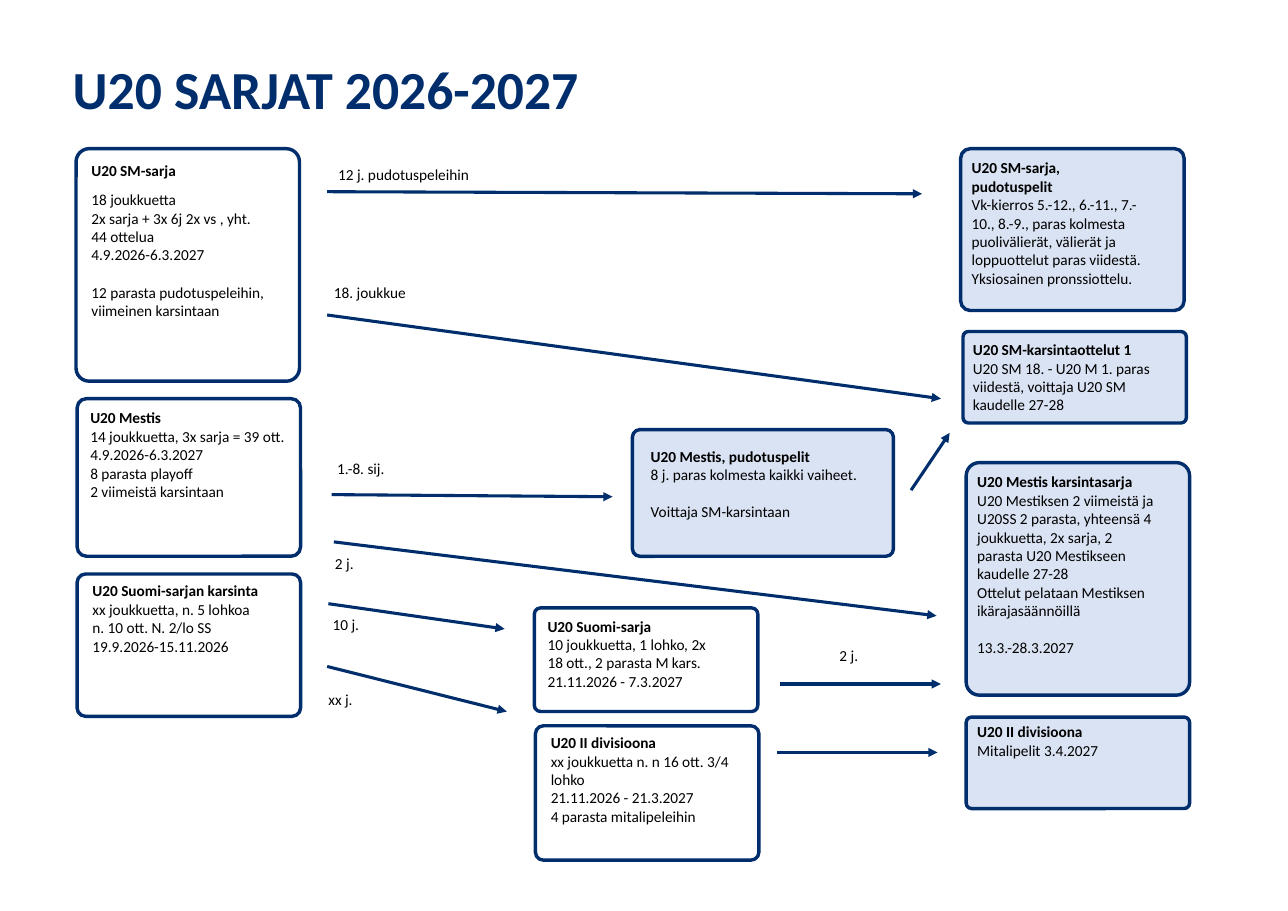
import pptx
import pptx.util
import pptx.dml.color
import pptx.enum.shapes
import pptx.enum.text
import pptx.oxml.ns
import lxml.etree

Pt = pptx.util.Pt
NAVY, PALE, BLACK = "002E6D", "DAE3F3", "000000"
FONT = "Calibri"
LINE_GAP = 12.2   # one empty text line
CORNER = 0.059    # corner radius as a share of the shorter side
BOX_WIDTH = 146

# Each box: (dx, dy, height, (text dx, text dy, text width), heading lines, body lines)
# A body line is a string, or a (string, space before) pair.
REGULAR_SEASON = [
    (0, 0, 152, (10, 8, 116), ["U20 SM-sarja"],
     [("18 joukkuetta", 7.3), "2x sarja + 3x 6j 2x vs , yht. 44 ottelua",
      "4.9.2026-6.3.2027",
      ("12 parasta pudotuspeleihin, viimeinen karsintaan", LINE_GAP)]),
    (0.7, 163.4, 103, (8.6, 6.5, 128), ["U20 Mestis"],
     ["14 joukkuetta, 3x sarja = 39 ott.", "4.9.2026-6.3.2027",
      "8 parasta playoff", "2 viimeistä karsintaan"]),
    (0.7, 278, 93, (10, 5, 123), ["U20 Suomi-sarjan karsinta"],
     ["xx joukkuetta, n. 5 lohkoa", "n. 10 ott. N. 2/lo SS",
      "19.9.2026-15.11.2026"]),
]
SECOND_STAGE = [
    (0, 0, 67.7, (8.6, 5.8, 130), ["U20 Suomi-sarja"],
     ["10 joukkuetta, 1 lohko, 2x", "18 ott., 2 parasta M kars.",
      "21.11.2026 - 7.3.2027"]),
    (0.7, 77, 87.8, (10, 5, 122), ["U20 II divisioona"],
     ["xx joukkuetta n. n 16 ott. 3/4 lohko", "21.11.2026 - 21.3.2027",
      "4 parasta mitalipeleihin"]),
]
MESTIS_PLAYOFFS = [
    (0, 0, 82.8, (12, 11.5, 156), ["U20 Mestis, pudotuspelit"],
     ["8 j. paras kolmesta kaikki vaiheet.",
      ("Voittaja SM-karsintaan", LINE_GAP)]),
]
FINAL_STAGE = [
    (0, 0, 105.8, (7.2, 6.5, 116), ["U20 SM-sarja,", "pudotuspelit"],
     ["Vk-kierros 5.-12., 6.-11., 7.-10., 8.-9., paras kolmesta "
      "puolivälierät, välierät ja", "loppuottelut paras viidestä.",
      "Yksiosainen pronssiottelu."]),
    (1.5, 119.5, 59.8, (6.5, 5.8, 132), ["U20 SM-karsintaottelut 1"],
     ["U20 SM 18. - U20 M 1. paras viidestä, voittaja U20 SM kaudelle 27-28"]),
    (3.6, 205.2, 152, (7.2, 6.5, 116), ["U20 Mestis karsintasarja"],
     ["U20 Mestiksen 2 viimeistä ja U20SS 2 parasta, yhteensä 4 joukkuetta, "
      "2x sarja, 2 parasta U20 Mestikseen kaudelle 27-28",
      "Ottelut pelataan Mestiksen ikärajasäännöillä",
      ("13.3.-28.3.2027", LINE_GAP)]),
    (3.6, 371.5, 59.8, (7.2, 3.6, 108), ["U20 II divisioona"],
     ["Mitalipelit 3.4.2027"]),
]

# Arrows: from x, y to x, y
ROUTES = [
    (213.8, 125.3, 602.6, 126.7), (213.8, 205.9, 614.9, 260.6),
    (216.7, 323.3, 400.3, 324.7), (218.2, 354.2, 612, 402.5),
    (214.6, 394.6, 329.8, 411.1), (213.8, 435.6, 331.2, 465.1),
    (595.4, 320.4, 620.6, 283), (509.8, 447.1, 614.9, 447.1),
    (507.6, 491.8, 612.7, 491.8),
]
ROUTE_LABELS = [
    (221, 108, "12 j. pudotuspeleihin"), (218.2, 185, "18. joukkue"),
    (220.3, 300.2, "1.-8. sij."), (218.9, 362.2, "2 j."),
    (217.4, 401.8, "10 j."), (214.6, 451.4, "xx j."), (548.6, 422.6, "2 j."),
]


def colour(code):
    return pptx.dml.color.RGBColor.from_string(code)


def write(para, text, size=10, bold=False, code=BLACK, before=0):
    para.alignment = pptx.enum.text.PP_ALIGN.LEFT
    para.space_before = Pt(before)
    span = para.add_run()
    span.text = text
    span.font.name = FONT
    span.font.size = Pt(size)
    span.font.bold = bold
    span.font.color.rgb = colour(code)


def set_frame(frame, left=0, top=0, right=0, wrap=True):
    frame.word_wrap = wrap
    frame.auto_size = pptx.enum.text.MSO_AUTO_SIZE.NONE
    frame.vertical_anchor = pptx.enum.text.MSO_ANCHOR.TOP
    frame.margin_left, frame.margin_top = Pt(left), Pt(top)
    frame.margin_right, frame.margin_bottom = Pt(right), 0


def add_title(page, left, top, width, height):
    title = page.shapes.title
    title.left, title.top = Pt(left), Pt(top)
    title.width, title.height = Pt(width), Pt(height)
    set_frame(title.text_frame)
    write(title.text_frame.paragraphs[0], "U20 SARJAT 2026-2027",
          size=35, bold=True, code=NAVY)


def add_series_box(page, left, top, width, height, text_area, heading, body, fill):
    box = page.shapes.add_shape(
        pptx.enum.shapes.MSO_SHAPE.ROUNDED_RECTANGLE,
        Pt(left), Pt(top), Pt(width), Pt(height))
    box.adjustments[0] = CORNER
    box.shadow.inherit = False
    box.line.color.rgb = colour(NAVY)
    box.line.width = Pt(2.25)
    if fill:
        box.fill.solid()
        box.fill.fore_color.rgb = colour(fill)
    else:
        box.fill.background()

    # Rounded corners already push the text in a little
    text_left, text_top, text_width = text_area
    pad = 0.29 * CORNER * min(width, height)
    frame = box.text_frame
    set_frame(frame, text_left - pad, text_top - pad,
              width - text_left - text_width - pad)
    lines = [(text, 0, True) for text in heading]
    for item in body:
        text, before = (item, 0) if isinstance(item, str) else item
        lines.append((text, before, False))
    for index, (text, before, bold) in enumerate(lines):
        para = frame.add_paragraph() if index else frame.paragraphs[0]
        write(para, text, bold=bold, before=before)


def add_stage(page, left, top, boxes, width=BOX_WIDTH, fill=None):
    for dx, dy, height, text_area, heading, body in boxes:
        add_series_box(page, left + dx, top + dy, width, height,
                       text_area, heading, body, fill)


def add_arrow(page, start_x, start_y, end_x, end_y):
    arrow = page.shapes.add_connector(
        pptx.enum.shapes.MSO_CONNECTOR.STRAIGHT,
        Pt(start_x), Pt(start_y), Pt(end_x), Pt(end_y))
    arrow.line.color.rgb = colour(NAVY)
    arrow.line.width = Pt(2)
    qn = pptx.oxml.ns.qn
    properties = arrow.element.spPr
    outline = properties.find(qn("a:ln"))
    lxml.etree.SubElement(outline, qn("a:tailEnd"), type="triangle")
    lxml.etree.SubElement(properties, qn("a:effectLst"))


def add_routes(page):
    for route in ROUTES:
        add_arrow(page, *route)
    for left, top, text in ROUTE_LABELS:
        label = page.shapes.add_textbox(Pt(left), Pt(top), Pt(110), Pt(13))
        set_frame(label.text_frame)
        write(label.text_frame.paragraphs[0], text)


def main():
    deck = pptx.Presentation()
    deck.slide_width, deck.slide_height = Pt(841.68), Pt(595.44)
    page = deck.slides.add_slide(deck.slide_layouts[5])
    add_title(page, 47.5, 36.7, 680, 46)
    # Series columns, left to right
    add_stage(page, 49.7, 97.2, REGULAR_SEASON)
    add_stage(page, 349.2, 397.4, SECOND_STAGE)
    add_stage(page, 413.3, 280.8, MESTIS_PLAYOFFS, width=170.6, fill=PALE)
    add_stage(page, 627.8, 97.2, FINAL_STAGE, fill=PALE)
    # Ways from one series to the next
    add_routes(page)
    deck.save("out.pptx")


if __name__ == "__main__":
    main()
